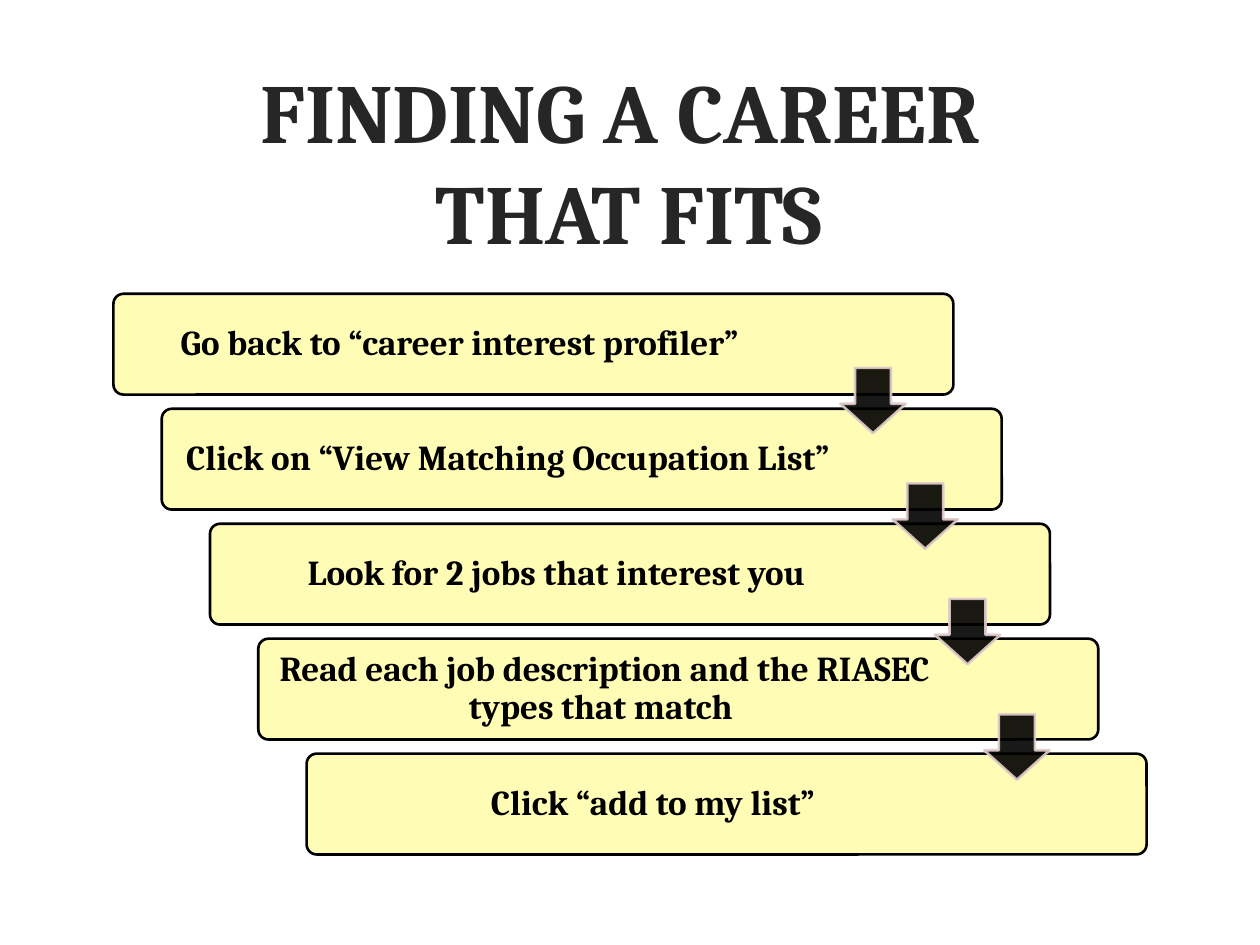
from dataclasses import dataclass

from lxml.etree import SubElement
from pptx import Presentation
from pptx.dml.color import RGBColor
from pptx.enum.shapes import MSO_SHAPE as SHAPE
from pptx.enum.text import MSO_ANCHOR as ANCHOR, MSO_AUTO_SIZE as AUTO, PP_ALIGN as ALIGN
from pptx.oxml.ns import qn
from pptx.util import Pt

FONT = "Cambria"
BLACK, TITLE_GREY, YELLOW, PINK = "000000", "262626", "FFFCB5", "E0CCCA"

# Staircase geometry, in points
LEFT, TOP = 64.8, 167.9
STEP_X, STEP_Y = 27.6, 65.7
BOX_W, BOX_H = 480, 57.6
LABEL_W, LABEL_H, LABEL_INSET = 392.4, 54, 1.8
ARROW_TOP, ARROW_SIZE, ARROW_STEP = 210.2, 37.4, 66


@dataclass
class Step:
    text: str
    arrow_left: float | None = None  # arrow leading to the next step


STEPS = [
    Step("Go back to “career interest profiler”", 480.2),
    Step("Click on “View Matching Occupation List”", 510),
    Step("Look for 2 jobs that interest you", 534.2),
    Step("Read each job description and the RIASEC types that match ", 562.4),
    Step("Click “add to my list”"),
]


def paint(color_format, color: str, alpha: int = 100) -> None:
    color_format.rgb = RGBColor.from_string(color)


def style_text(tf, text: str, size: float, color: str, spacing: float = 1.0) -> None:
    tf.word_wrap = True
    tf.auto_size = AUTO.NONE
    tf.vertical_anchor = ANCHOR.MIDDLE
    p = tf.paragraphs[0]
    p.text = text
    p.alignment = ALIGN.CENTER
    p.line_spacing = spacing
    for r in p.runs:
        r.font.name = FONT
        r.font.size = Pt(size)
        r.font.bold = True
        paint(r.font.color, color)


def add_outlined(slide, kind, left: float, top: float, width: float, height: float,
                 fill: str, line: str, adjustments: list[float], alpha: int = 100):
    sp = slide.shapes.add_shape(kind, Pt(left), Pt(top), Pt(width), Pt(height))
    sp.shadow.inherit = False
    for i, value in enumerate(adjustments):
        sp.adjustments[i] = value
    sp.fill.solid()
    paint(sp.fill.fore_color, fill)
    paint(sp.line.color, line)
    sp.line.width = Pt(1.5)
    if alpha < 100:
        for clr in sp.element.spPr.iter(qn("a:srgbClr")):
            SubElement(clr, qn("a:alpha"), val=str(alpha * 1000))
    return sp


def add_step(slide, index: int, step: Step) -> None:
    left, top = LEFT + index * STEP_X, TOP + index * STEP_Y
    add_outlined(slide, SHAPE.ROUNDED_RECTANGLE, left, top, BOX_W, BOX_H,
                 YELLOW, BLACK, [0.1])
    label = slide.shapes.add_textbox(Pt(left + LABEL_INSET), Pt(top + LABEL_INSET),
                                     Pt(LABEL_W), Pt(LABEL_H))
    tf = label.text_frame
    tf.margin_left = tf.margin_right = tf.margin_top = tf.margin_bottom = Pt(6)
    style_text(tf, step.text, 20, BLACK, 0.9)


def add_arrow(slide, index: int, left: float) -> None:
    add_outlined(slide, SHAPE.DOWN_ARROW, left, ARROW_TOP + index * ARROW_STEP,
                 ARROW_SIZE, ARROW_SIZE, BLACK, PINK, [0.55, 0.45], alpha=90)


def main() -> None:
    prs = Presentation()
    prs.slide_width, prs.slide_height = Pt(720), Pt(540)
    slide = prs.slides.add_slide(prs.slide_layouts[5])

    # Title
    title = slide.shapes.title
    title.left, title.top, title.width, title.height = Pt(43.2), Pt(34.6), Pt(632.9), Pt(113.8)
    style_text(title.text_frame, "FINDING A CAREER \vTHAT FITS", 48, TITLE_GREY)

    # Steps, then the arrows that overlap them
    for i, step in enumerate(STEPS):
        add_step(slide, i, step)
    for i, step in enumerate(STEPS):
        if step.arrow_left is not None:
            add_arrow(slide, i, step.arrow_left)

    prs.save("out.pptx")


if __name__ == "__main__":
    main()
